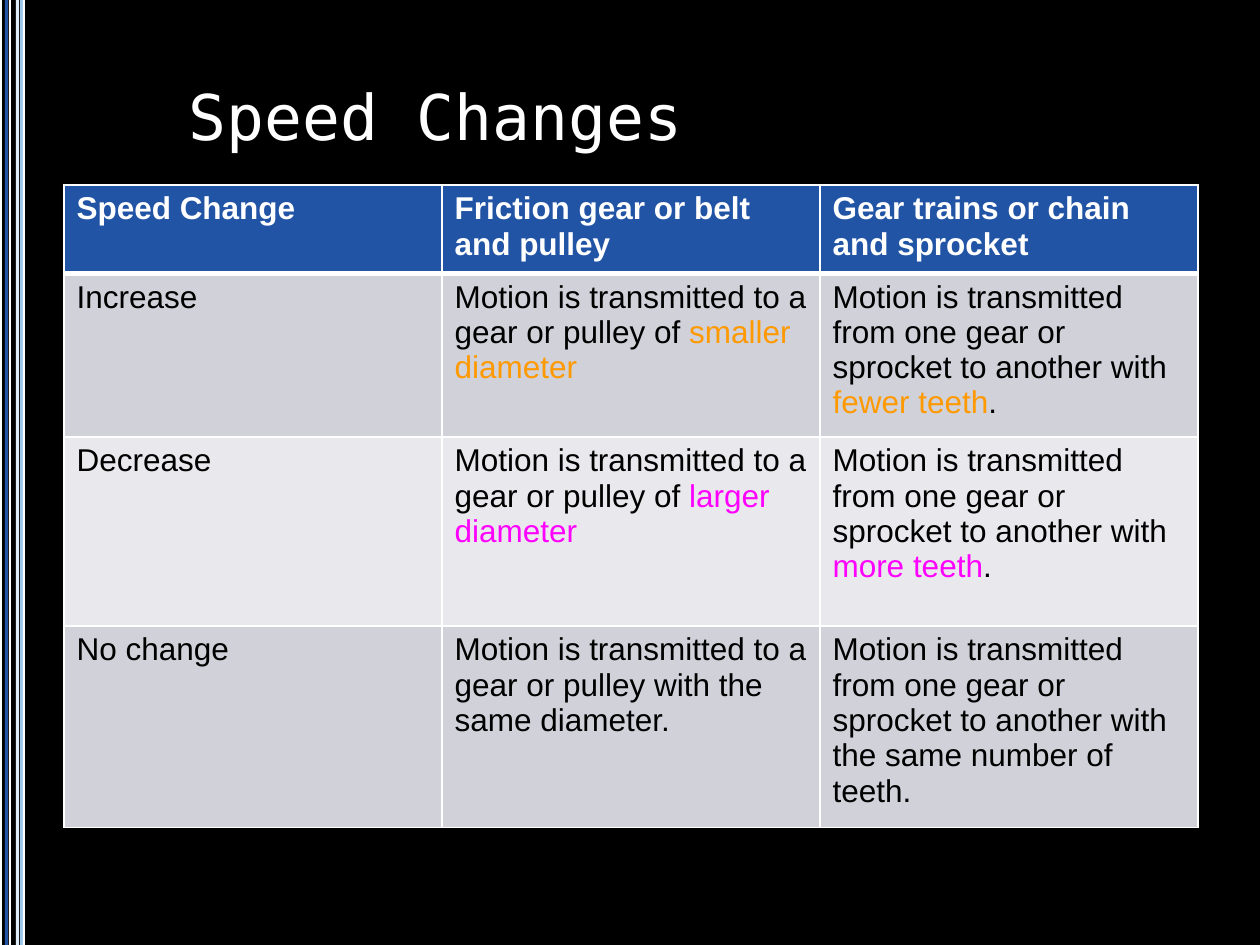
from lxml import etree
from pptx import Presentation
from pptx.dml.color import RGBColor
from pptx.enum.shapes import MSO_SHAPE
from pptx.enum.text import MSO_ANCHOR
from pptx.oxml.ns import qn
from pptx.util import Emu, Pt

RECTANGLE = MSO_SHAPE.RECTANGLE
MIDDLE = MSO_ANCHOR.MIDDLE

BLACK = RGBColor(0x00, 0x00, 0x00)
WHITE = RGBColor(0xFF, 0xFF, 0xFF)
BLUE = RGBColor(0x22, 0x54, 0xA6)
SKY = RGBColor(0x9F, 0xC6, 0xE9)
PALE_SKY = RGBColor(0xE0, 0xED, 0xF8)
DARK_BAND = RGBColor(0xD1, 0xD1, 0xDA)
LIGHT_BAND = RGBColor(0xE9, 0xE9, 0xED)
ORANGE = RGBColor(0xFF, 0x99, 0x00)
MAGENTA = RGBColor(0xFF, 0x00, 0xFF)

WIDTH, HEIGHT = 1260, 945
EMU_PER_INCH, PX_PER_INCH = 914400, 126

STRIPES = [
    (0, 2, WHITE),
    (9, 2, WHITE),
    (14, 1, BLACK),
    (16, 3, PALE_SKY),
    (20, 3, SKY),
    (23, 2, WHITE),
    (5, 3, BLUE),
]

BELT = "Motion is transmitted to a gear or pulley "
CHAIN = "Motion is transmitted from one gear or sprocket to another with "
HEADERS = ["Speed Change", "Friction gear or belt and pulley", "Gear trains or chain and sprocket"]
CHANGES = [
    ("Increase", "smaller diameter", "fewer teeth", ORANGE),
    ("Decrease", "larger diameter", "more teeth", MAGENTA),
]
ROW_HEIGHTS = [84, 153, 189, 189]


def px(length):
    return Emu(round(length * EMU_PER_INCH / PX_PER_INCH))


class SlideBuilder:
    heading_font = "DejaVu Sans Mono"
    body_font = "Arial"
    heading_size = 36
    body_size = 18

    def __init__(self, page, background):
        self.page = page
        page.background.fill.solid()
        page.background.fill.fore_color.rgb = background

    def style(self, span, font, size, color, bold=False):
        span.font.name = font
        span.font.size = Pt(size)
        span.font.color.rgb = color
        span.font.bold = bold

    def stripe(self, left, width, color):
        bar = self.page.shapes.add_shape(RECTANGLE, px(left), 0, px(width), px(HEIGHT))
        bar.shadow.inherit = False
        bar.fill.solid()
        bar.fill.fore_color.rgb = color
        bar.line.fill.background()

    def title(self, text, left, top, width, height, inset):
        box = self.page.shapes.add_textbox(px(left), px(top), px(width), px(height))
        frame = box.text_frame
        frame.word_wrap = True
        frame.vertical_anchor = MIDDLE
        frame.margin_left = frame.margin_right = px(inset)
        frame.margin_top = frame.margin_bottom = px(inset)
        frame.text = text
        self.style(frame.paragraphs[0].runs[0], self.heading_font, self.heading_size, WHITE)

    def border(self, cell, side, points):
        line = etree.SubElement(cell._tc.get_or_add_tcPr(), qn(f"a:{side}"), w=str(Pt(points)))
        fill = etree.SubElement(line, qn("a:solidFill"))
        etree.SubElement(fill, qn("a:srgbClr"), val=str(WHITE))

    def cell(self, cell, spans, fill, bold, top, bottom):
        for side, points in (("lnL", 1), ("lnR", 1), ("lnT", top), ("lnB", bottom)):
            self.border(cell, side, points)
        cell.fill.solid()
        cell.fill.fore_color.rgb = fill
        para = cell.text_frame.paragraphs[0]
        for text, color in spans:
            span = para.add_run()
            span.text = text
            self.style(span, self.body_font, self.body_size, color, bold)

    def table(self, rows, left, top, width, heights):
        frame = self.page.shapes.add_table(
            len(rows), len(rows[0]), px(left), px(top), px(width), px(sum(heights))
        )
        grid = frame.table
        for row, height in zip(grid.rows, heights):
            row.height = px(height)
        for index, row in enumerate(rows):
            header = index == 0
            band = DARK_BAND if index % 2 else LIGHT_BAND
            for column, spans in enumerate(row):
                self.cell(
                    grid.cell(index, column),
                    spans,
                    BLUE if header else band,
                    header,
                    3 if index == 1 else 1,
                    3 if header else 1,
                )


def table_rows():
    rows = [[[(text, WHITE)] for text in HEADERS]]
    for change, diameter, teeth, accent in CHANGES:
        rows.append([
            [(change, BLACK)],
            [(BELT + "of ", BLACK), (diameter, accent)],
            [(CHAIN, BLACK), (teeth, accent), (".", BLACK)],
        ])
    rows.append([
        [("No change", BLACK)],
        [(BELT + "with the same diameter.", BLACK)],
        [(CHAIN + "the same number of teeth.", BLACK)],
    ])
    return rows


def main():
    deck = Presentation()
    deck.slide_width, deck.slide_height = px(WIDTH), px(HEIGHT)
    builder = SlideBuilder(deck.slides.add_slide(deck.slide_layouts[6]), BLACK)
    for left, width, color in STRIPES:
        builder.stripe(left, width, color)
    builder.title("Speed Changes", 164, 37, 1033, 157, 25)
    builder.table(table_rows(), 64, 185, 1134, ROW_HEIGHTS)
    deck.save("out.pptx")


if __name__ == "__main__":
    main()
